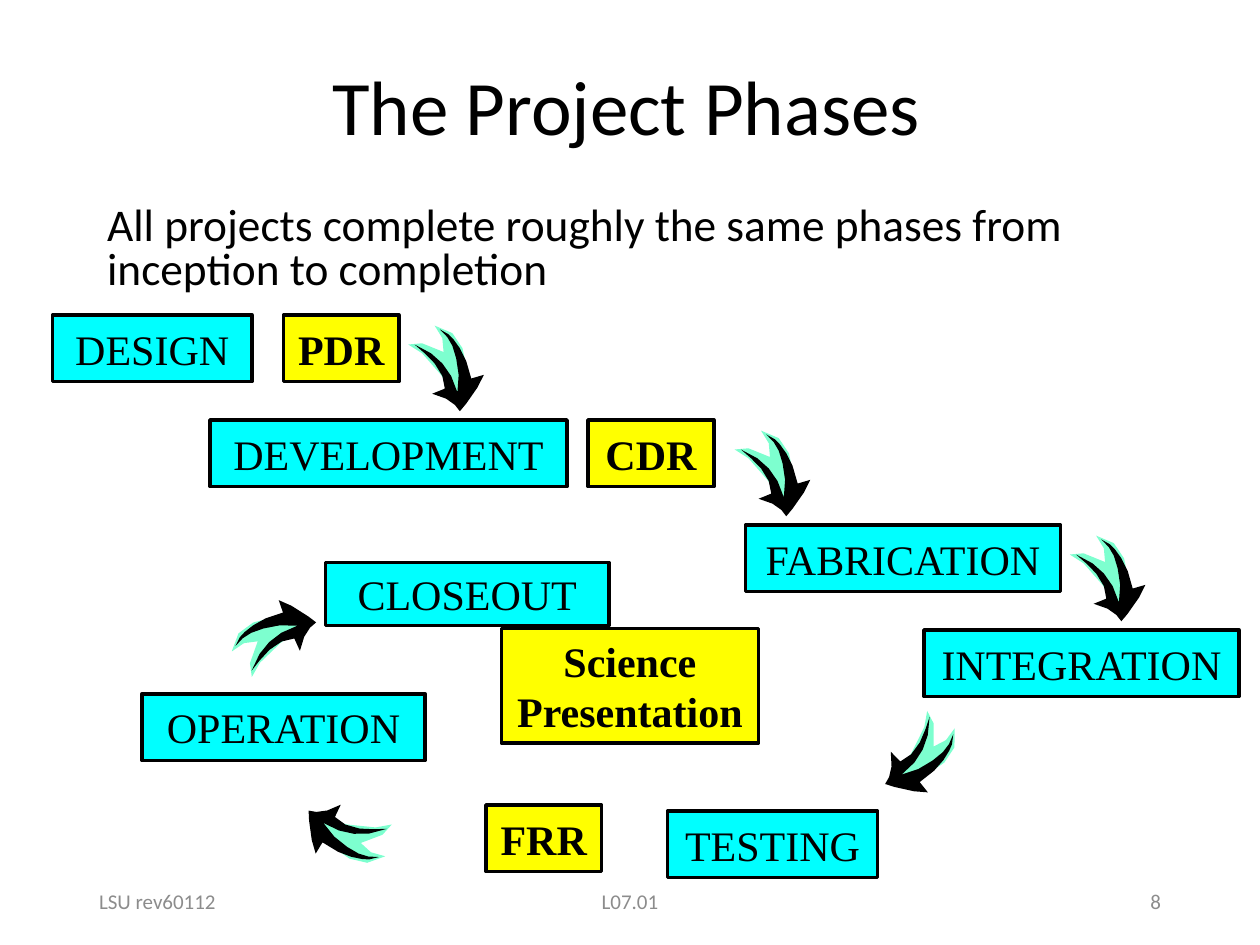
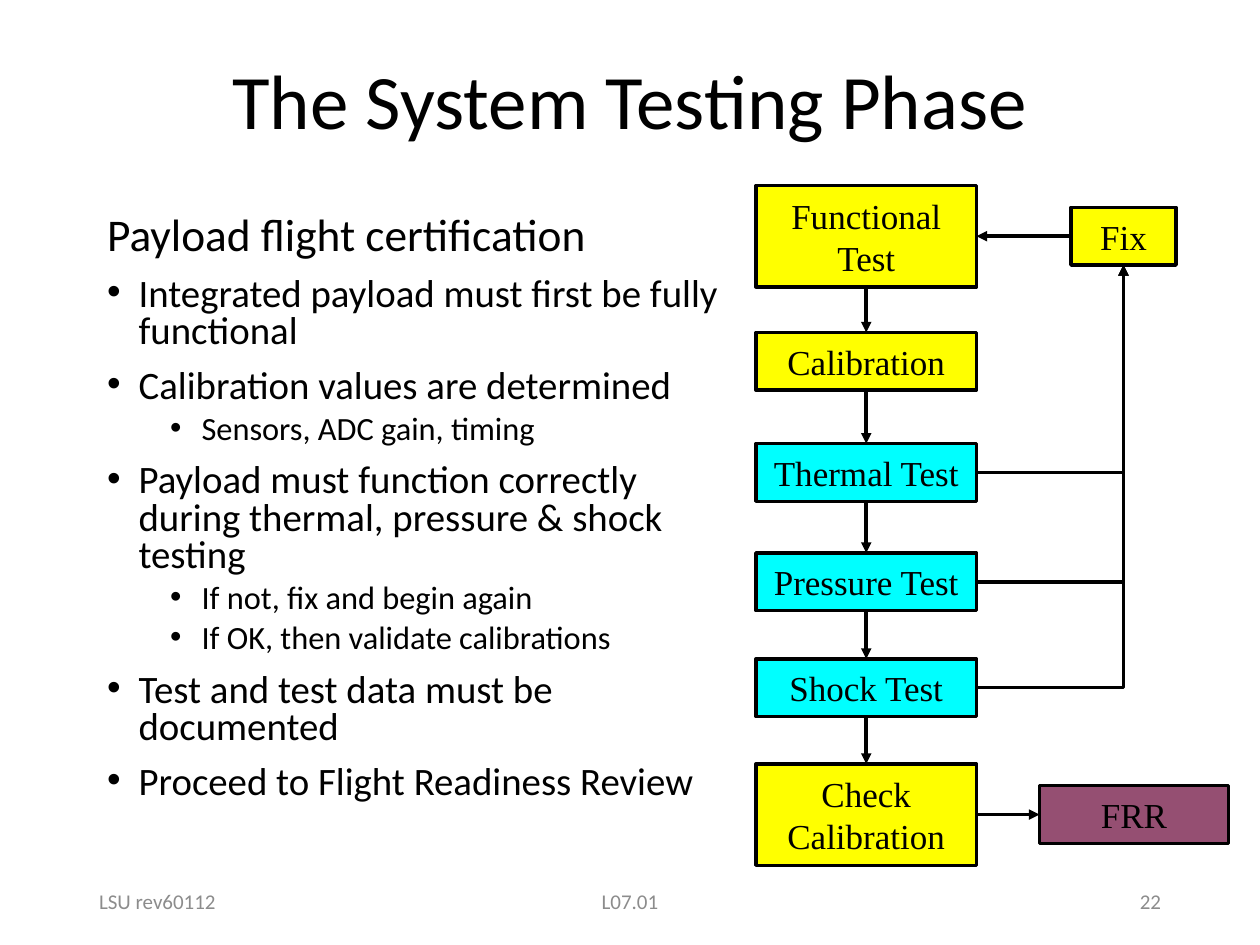
"""Build two slides on project phases and system testing."""
from math import cos, radians, sin

from lxml import etree
from pptx import Presentation
from pptx.dml.color import RGBColor
from pptx.enum.shapes import MSO_CONNECTOR, MSO_SHAPE
from pptx.enum.text import MSO_ANCHOR, MSO_AUTO_SIZE, PP_ALIGN
from pptx.oxml.ns import qn
from pptx.util import Pt

RECTANGLE = MSO_SHAPE.RECTANGLE
STRAIGHT, ELBOW = MSO_CONNECTOR.STRAIGHT, MSO_CONNECTOR.ELBOW
MIDDLE, NO_FIT = MSO_ANCHOR.MIDDLE, MSO_AUTO_SIZE.NONE
LEFT, CENTER, RIGHT = PP_ALIGN.LEFT, PP_ALIGN.CENTER, PP_ALIGN.RIGHT
BLACK = RGBColor(0x00, 0x00, 0x00)
GRAY = RGBColor(0x8C, 0x8C, 0x8C)
CYAN = RGBColor(0x00, 0xFF, 0xFF)
YELLOW = RGBColor(0xFF, 0xFF, 0x00)
PLUM = RGBColor(0x95, 0x4F, 0x72)
MINT = RGBColor(0x7D, 0xFF, 0xCF)
TOP_SIDE, LEFT_SIDE, BOTTOM_SIDE, RIGHT_SIDE = range(4)

# size, left margin, hanging indent, space before
LIST_STYLES = [(25.9, 0, 0, 10), (22.2, 18, 18, 10), (18.5, 54, 18, 5)]

deck = Presentation()
deck.slide_width, deck.slide_height = Pt(720), Pt(540)


def add_page(title, title_place, body_place, items, number):
    """Add a page with its title, list and footer."""
    page = deck.slides.add_slide(deck.slide_layouts[1])
    heading, body = page.shapes.title, page.placeholders[1]
    for holder, place in ((heading, title_place), (body, body_place)):
        holder.left, holder.top, holder.width, holder.height = map(Pt, place)
        holder.text_frame.auto_size = NO_FIT
    heading.text_frame.vertical_anchor = MIDDLE
    heading.text_frame.text = title
    para = heading.text_frame.paragraphs[0]
    para.alignment, para.line_spacing = CENTER, 0.9
    para.font.name, para.font.size = "Calibri", Pt(44)
    para.font.color.rgb = BLACK

    body.text_frame.text = "\n".join(text for text, _ in items)
    for i, (para, (_, style)) in enumerate(zip(body.text_frame.paragraphs, items)):
        size, margin, hanging, before = LIST_STYLES[style]
        para.level = max(style - 1, 0)
        properties = para._p.get_or_add_pPr()
        properties.set("marL", str(Pt(margin)))
        properties.set("indent", str(-Pt(hanging)))
        if hanging:
            etree.SubElement(properties, qn("a:buFont"), typeface="Arial")
            etree.SubElement(properties, qn("a:buChar"), char="•")
        else:
            etree.SubElement(properties, qn("a:buNone"))
        para.line_spacing = 0.8
        para.space_before = Pt(before if i else 0)
        para.font.name, para.font.size = "Calibri", Pt(size)
        para.font.color.rgb = BLACK

    for text, left, width, alignment in (
        ("LSU rev60112", 49.5, 162, LEFT),
        ("L07.01", 238.5, 243, CENTER),
        (number, 508.5, 162, RIGHT),
    ):
        footer = page.shapes.add_textbox(Pt(left), Pt(500.5), Pt(width), Pt(28.75))
        footer.text_frame.word_wrap = True
        footer.text_frame.vertical_anchor = MIDDLE
        footer.text_frame.text = text
        para = footer.text_frame.paragraphs[0]
        para.alignment = alignment
        para.font.name, para.font.size = "Calibri", Pt(12)
        para.font.color.rgb = GRAY
    return page


def add_box(page, text, place, fill, size, bold=False):
    """Add an outlined box with centred text."""
    box = page.shapes.add_shape(RECTANGLE, *map(Pt, place))
    box.shadow.inherit = False
    box.fill.solid()
    box.fill.fore_color.rgb = fill
    box.line.color.rgb, box.line.width = BLACK, Pt(2)
    box.text_frame.word_wrap = True
    box.text_frame.vertical_anchor = MIDDLE
    box.text_frame.text = text
    para = box.text_frame.paragraphs[0]
    para.alignment = CENTER
    para.font.name, para.font.size, para.font.bold = "Times New Roman", Pt(size), bold
    para.font.color.rgb = BLACK
    return box


phases_page = add_page(
    "The Project Phases",
    (126.5, 11, 463, 104),
    (54, 114.5, 612, 60),
    [("All projects complete roughly the same phases from inception to completion", 0)],
    "8",
)
for phase, left, top, width, height in (
    ("OPERATION", 81, 396.5, 162, 38),
    ("DESIGN", 30, 180, 114, 38),
    ("DEVELOPMENT", 120, 240, 204, 38),
    ("FABRICATION", 426, 300, 180, 38),
    ("INTEGRATION", 528, 360, 180, 38),
    ("TESTING", 381.5, 463.5, 120, 38),
    ("CLOSEOUT", 186, 321.5, 162, 36),
):
    add_box(phases_page, phase, (left, top, width, height), CYAN, 24)
for review, left, top, width, height in (
    ("PDR", 162, 180, 66, 38),
    ("CDR", 336, 240, 72, 38),
    ("FRR", 277.75, 460, 66, 38),
    ("Science Presentation", 286.5, 359, 147, 65.5),
):
    add_box(phases_page, review, (left, top, width, height), YELLOW, 24, True)

SWOOSH_GLOW = [
    (-14.8, -15.8), (-2.5, -10.8), (-3.2, -18.7), (-7.6, -25.9), (2.5, -21.6),
    (8.3, -13), (12.6, 7.2), (5.4, 17.3), (-4, 2.2), (-14.8, -10.1), (-22.7, -15.1),
]
SWOOSH_ARROW = [
    (-19.1, -15.1), (-9.7, -10.1), (-3.2, -4.3), (1.8, 2.9), (5.4, 12.2),
    (6.1, 2.2), (4.7, -7.2), (2.5, -14.4), (-0.4, -19.4), (-4.7, -23.8),
    (0.4, -20.9), (3.2, -18), (6.8, -13), (10.4, -5.8), (13.3, 4.3),
    (20.5, 2.2), (16.9, 9.4), (10.4, 18.7), (6.8, 23), (4, 19.4),
    (-1.1, 15.8), (-9, 13), (-1.8, 10.1), (-3.2, 2.9), (-7.6, -4.3), (-13.3, -10.1),
]
for center_x, center_y, turn in (
    (256, 212, 0),
    (442.5, 272, 0),
    (634, 332, 0),
    (524.5, 433, 67.7),
    (197, 475.5, 137.2),
    (158, 363.5, 267.4),
):
    c, s = cos(radians(turn)), sin(radians(turn))
    for outline, color in ((SWOOSH_GLOW, MINT), (SWOOSH_ARROW, BLACK)):
        points = [
            (Pt(center_x + x * c - y * s), Pt(center_y + x * s + y * c))
            for x, y in outline
        ]
        builder = phases_page.shapes.build_freeform(*points[0])
        builder.add_line_segments(points[1:])
        swoosh = builder.convert_to_shape()
        swoosh.shadow.inherit = False
        swoosh.fill.solid()
        swoosh.fill.fore_color.rgb = color
        swoosh.line.fill.background()

testing_page = add_page(
    "The System Testing Phase",
    (113, 15, 494, 90),
    (54, 120, 372, 360),
    [
        ("Payload flight certification", 0),
        ("Integrated payload must first be fully functional", 1),
        ("Calibration values are determined", 1),
        ("Sensors, ADC gain, timing", 2),
        ("Payload must function correctly during thermal, pressure & shock testing", 1),
        ("If not, fix and begin again", 2),
        ("If OK, then validate calibrations", 2),
        ("Test and test data must be documented", 1),
        ("Proceed to Flight Readiness Review", 1),
    ],
    "22",
)
steps = [
    add_box(testing_page, text, (432, top, 126, height), fill, 20)
    for text, top, height, fill in (
        ("Functional Test", 106, 58, YELLOW),
        ("Calibration", 190, 33, YELLOW),
        ("Thermal Test", 253.5, 33, CYAN),
        ("Pressure Test", 316, 33, CYAN),
        ("Shock Test", 376.5, 33, CYAN),
        ("Check Calibration", 436.5, 58, YELLOW),
    )
]
fix = add_box(testing_page, "Fix", (612, 118.5, 60, 33), YELLOW, 20)
frr = add_box(testing_page, "FRR", (594, 449, 108, 33), PLUM, 20)

links = [
    (STRAIGHT, upper, BOTTOM_SIDE, lower, TOP_SIDE)
    for upper, lower in zip(steps, steps[1:])
]
links += [(ELBOW, test, RIGHT_SIDE, fix, BOTTOM_SIDE) for test in steps[2:5]]
links += [
    (STRAIGHT, fix, LEFT_SIDE, steps[0], RIGHT_SIDE),
    (STRAIGHT, steps[-1], RIGHT_SIDE, frr, LEFT_SIDE),
]
for kind, source, source_side, target, target_side in links:
    link = testing_page.shapes.add_connector(kind, 0, 0, 0, 0)
    link.begin_connect(source, source_side)
    link.end_connect(target, target_side)
    link.line.color.rgb, link.line.width = BLACK, Pt(2)
    properties = link._element.spPr
    if kind == ELBOW:
        properties.find(qn("a:prstGeom")).set("prst", "bentConnector2")
    etree.SubElement(properties.find(qn("a:ln")), qn("a:tailEnd"), type="triangle")
    etree.SubElement(properties, qn("a:effectLst"))

deck.save("out.pptx")
